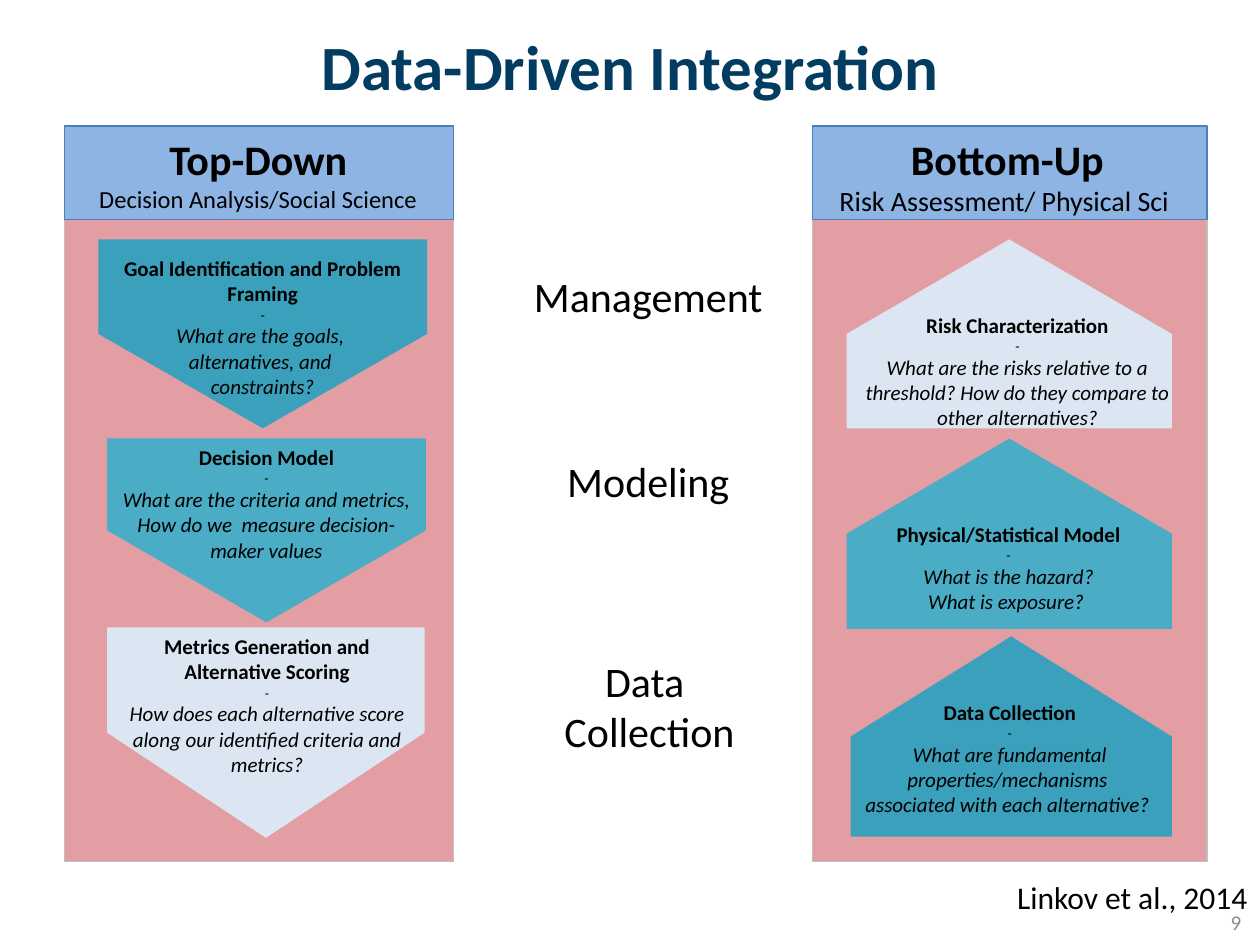
from dataclasses import dataclass
from pptx import Presentation
from pptx.dml.color import RGBColor
from pptx.enum.shapes import MSO_SHAPE
from pptx.enum.text import MSO_ANCHOR, PP_ALIGN
from pptx.util import Pt

SCALE = 9144  # EMU per px, 100 px to the inch


@dataclass(frozen=True)
class Theme:
    face: str = "Calibri"
    ink: str = "000000"
    navy: str = "033C61"
    grey: str = "8C8C8C"
    white: str = "FFFFFF"
    panel: str = "E29EA3"
    edge: str = "BFBFBF"
    head: str = "8EB4E3"
    rim: str = "4B7EBC"
    deep: str = "3BA0BB"
    teal: str = "4BACC6"
    pale: str = "DCE6F2"
    title: int = 36
    large: int = 24
    cite: int = 18
    note: int = 16
    sub: int = 14
    small: int = 12
    tiny: int = 8


THEME = Theme()


def emu(*px):
    return [round(n * SCALE) for n in px]


class Deck:
    def __init__(self, theme):
        self.theme = theme
        self.file = Presentation()
        self.file.slide_width, self.file.slide_height = emu(1000, 750)
        self.slide = self.file.slides.add_slide(self.file.slide_layouts[5])

    def fill(self, frame, lines, align=PP_ALIGN.CENTER, anchor=MSO_ANCHOR.TOP,
             color=None):
        """Fill a frame with one paragraph per (text, font values) pair."""
        frame.word_wrap = True
        frame.vertical_anchor = anchor
        for i, (text, look) in enumerate(lines):
            para = frame.paragraphs[0] if i == 0 else frame.add_paragraph()
            para.alignment = align
            run = para.add_run()
            run.text = text
            values = {"name": self.theme.face, "bold": False, **look}
            for key, value in values.items():
                setattr(run.font, key, value)
            run.font.color.rgb = RGBColor.from_string(color or self.theme.ink)

    def title(self, box, text):
        shape = self.slide.shapes.title
        shape.left, shape.top, shape.width, shape.height = emu(*box)
        look = {"size": Pt(self.theme.title), "bold": True}
        self.fill(shape.text_frame, [(text, look)], color=self.theme.navy)

    def text(self, box, lines, **form):
        shape = self.slide.shapes.add_textbox(*emu(*box))
        self.fill(shape.text_frame, lines, **form)

    def shape(self, kind, box, fill, line=None):
        shape = self.slide.shapes.add_shape(kind, *emu(*box))
        shape.shadow.inherit = False
        shape.fill.solid()
        shape.fill.fore_color.rgb = RGBColor.from_string(fill)
        if line:
            shape.line.color.rgb = RGBColor.from_string(line)
            shape.line.width = Pt(0.75)
        else:
            shape.line.fill.background()
        return shape

    def column(self, left, width, box, name, field, size):
        theme = self.theme
        self.shape(MSO_SHAPE.RECTANGLE, (left, 141, width, 543),
                   theme.panel, theme.edge)
        self.shape(MSO_SHAPE.RECTANGLE, (left, 100, width, 74),
                   theme.head, theme.rim)
        self.text(box, [(name, {"size": Pt(theme.large), "bold": True}),
                        (field, {"size": Pt(size)})])

    def step(self, turn, seen, fill, box, name, asks):
        """Draw a pentagon that, once turned, covers the seen box."""
        left, top, width, height = seen
        shift = (width - height) / 2
        plate = self.shape(MSO_SHAPE.PENTAGON,
                           (left + shift, top - shift, height, width), fill)
        plate.rotation = turn
        small = Pt(self.theme.small)
        self.text(box, [(name, {"size": small, "bold": True}),
                        ("-", {"size": Pt(self.theme.tiny)}),
                        *((ask, {"size": small, "italic": True}) for ask in asks)])


COLUMNS = [
    (51, 309, (51, 101, 308, 74), "Top-Down",
     "Decision Analysis/Social Science", THEME.sub),
    (645, 313, (633, 101, 333, 77), "Bottom-Up",
     "Risk Assessment/ Physical Sci ", THEME.note),
]

DOWN, UP = 90, 270
STEPS = [
    (DOWN, (78, 190, 261, 150), THEME.deep, (72, 198, 273, 125),
     "Goal Identification and Problem Framing",
     ["What are the goals, ", "alternatives, and ", "constraints?"]),
    (DOWN, (85, 348, 253, 146), THEME.teal, (79, 348, 265, 125),
     "Decision Model",
     ["What are the criteria and metrics, How do we  measure "
      "decision-maker values"]),
    (DOWN, (85, 498, 252, 167), THEME.pale, (92, 498, 240, 125),
     "Metrics Generation and Alternative Scoring",
     ["How does each alternative score along our identified criteria "
      "and metrics?"]),
    (UP, (675, 505, 255, 159), THEME.deep, (651, 550, 301, 125),
     "Data Collection",
     ["What are fundamental properties/mechanisms ",
      "associated with each alternative? "]),
    (UP, (672, 348, 258, 151), THEME.teal, (669, 409, 263, 84),
     "Physical/Statistical Model",
     ["What is the hazard?", "What is exposure? "]),
    (UP, (672, 190, 258, 150), THEME.pale, (673, 243, 269, 104),
     "Risk Characterization",
     ["What are the risks relative to a threshold? How do they compare to "
      "other alternatives?"]),
]

STAGES = [
    ((412, 210, 205, 50), ["Management"]),
    ((434, 357, 161, 50), ["Modeling"]),
    ((382, 515, 267, 91), ["Data ", "Collection"]),
]


def main():
    deck = Deck(THEME)
    deck.title((50, 17, 900, 125), "Data-Driven Integration")
    for column in COLUMNS:
        deck.column(*column)
    for step in STEPS:
        deck.step(*step)
    for box, words in STAGES:
        deck.text(box, [(word, {"size": Pt(THEME.large)}) for word in words])
    cite = deck.shape(MSO_SHAPE.RECTANGLE, (600, 692, 400, 40), THEME.white)
    deck.fill(cite.text_frame,
              [("Linkov et al., 2014", {"size": Pt(THEME.cite)})],
              align=PP_ALIGN.RIGHT)
    deck.text((762, 712, 233, 40), [("9", {"size": Pt(THEME.small)})],
              align=PP_ALIGN.RIGHT, anchor=MSO_ANCHOR.MIDDLE, color=THEME.grey)
    deck.file.save("out.pptx")


if __name__ == "__main__":
    main()
